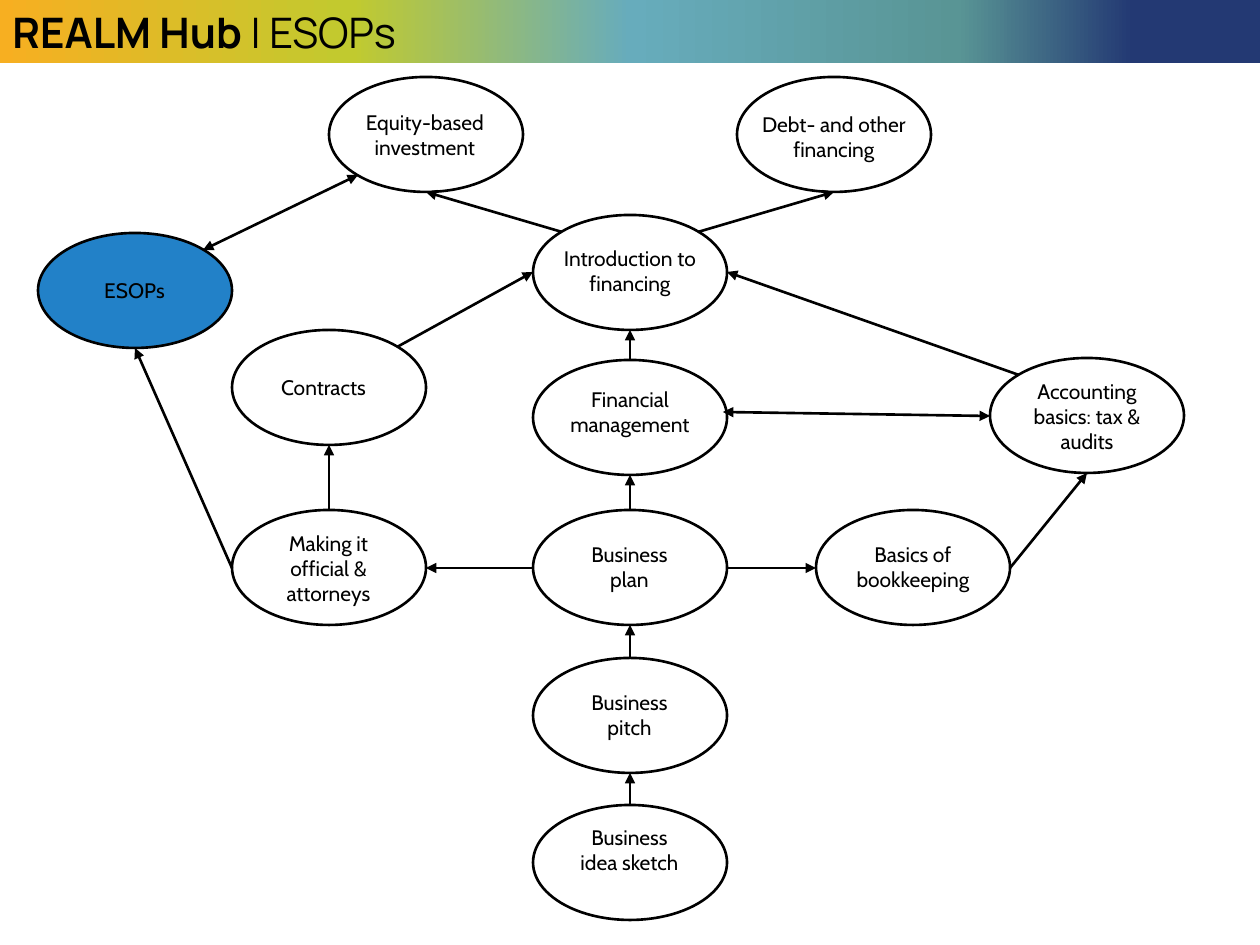
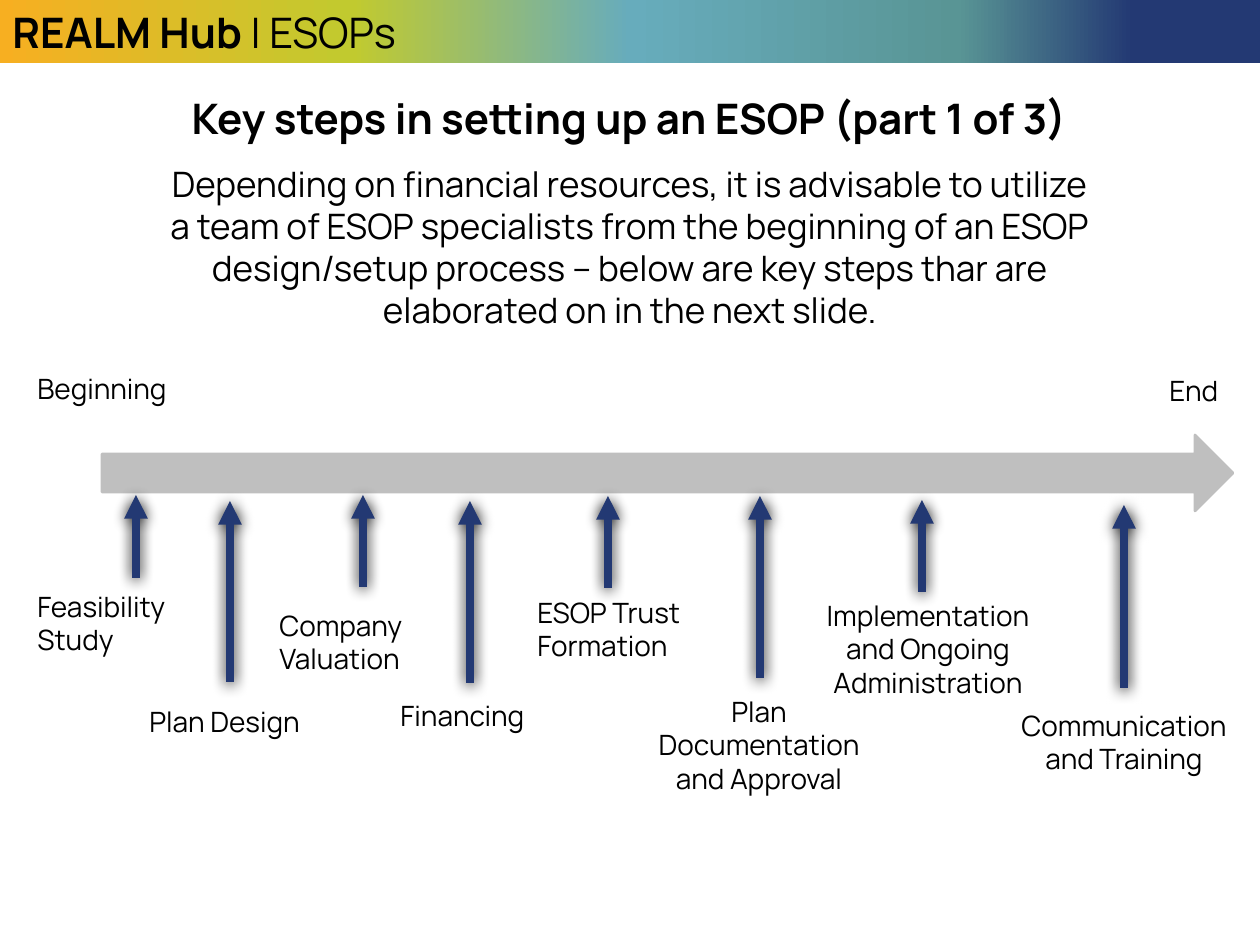
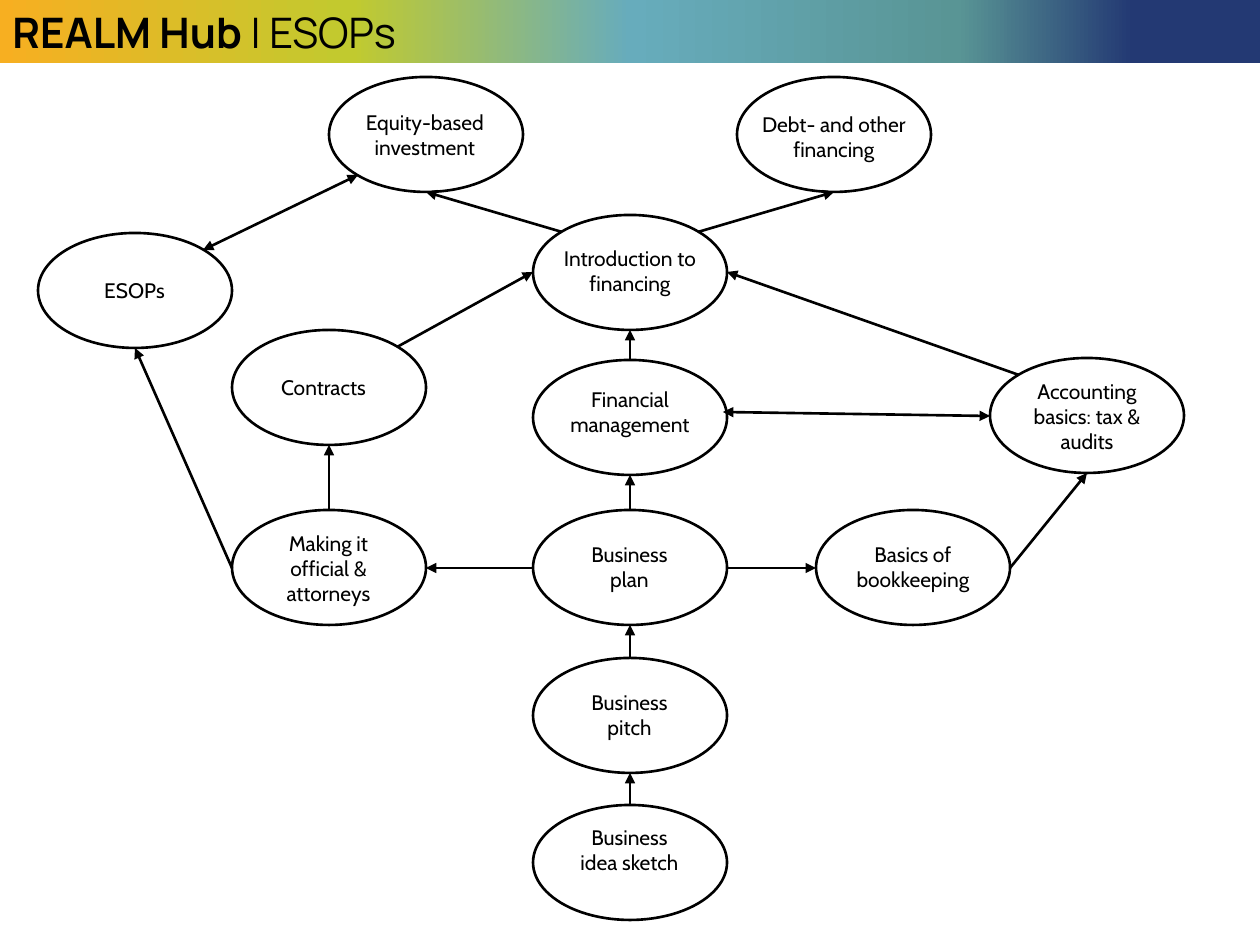
from lxml import etree
from pptx import Presentation
from pptx import util as u
from pptx.dml.color import RGBColor
from pptx.enum import shapes, text
from pptx.oxml.ns import qn

# Scale and colours
PX = u.Inches(1) / 126
BLACK = RGBColor(0x00, 0x00, 0x00)
NAVY = RGBColor(0x23, 0x39, 0x73)
BLUE = RGBColor(0x22, 0x81, 0xC8)
GREY = RGBColor(0xBF, 0xBF, 0xBF)
BAND_STOPS = [
    (0, RGBColor(0xF7, 0xAF, 0x21)),
    (28, RGBColor(0xC1, 0xCA, 0x2F)),
    (50, RGBColor(0x67, 0xAC, 0xBC)),
    (76, RGBColor(0x59, 0x95, 0x95)),
    (90, NAVY),
]

# Text formats
HEADING = {"name": "Manrope", "size": u.Pt(24), "bold": True}
BAND_TOPIC = {**HEADING, "bold": False}
BODY = {"name": "Manrope", "size": u.Pt(20)}
LABEL = {"name": "Manrope", "size": u.Pt(16)}
NODE = {"name": "Cabin", "size": u.Pt(12)}

LEFT, CENTER = text.PP_ALIGN.LEFT, text.PP_ALIGN.CENTER
SHADOW = {"blurRad": u.Pt(8.5), "dist": u.Pt(1), "dir": 5400000,
          "algn": "t", "rotWithShape": 0}

# Course map: label, left, top, text width, text offset x and y, text lines
OVAL_W, OVAL_H = 194, 115
NODES = {
    "idea": ("Business idea sketch", 533, 805, 125, 0, 13, 3),
    "pitch": ("Business pitch", 533, 658, 125, 0, 25, 2),
    "plan": ("Business plan", 533, 510, 125, 0, 25, 2),
    "intro": ("Introduction to financing", 533, 215, 160, 0, 24, 2),
    "books": ("Basics of bookkeeping", 816, 510, 152, 0, 25, 2),
    "official": ("Making it official & attorneys", 232, 510, 125, 0, 14, 3),
    "accounting": ("Accounting basics: tax & audits", 990, 358, 160, 0, 14, 3),
    "contracts": ("Contracts", 232, 330, 159, -5, 38, 1),
    "equity": ("Equity-based\ninvestment", 329, 77, 176, -1, 26, 2),
    "debt": ("Debt- and other financing", 737, 77, 176, 0, 28, 3),
    "management": ("Financial management", 533, 360, 186, 0, 20, 2),
    "esops": ("ESOPs", 38, 233, 159, 0, 38, 1),
}

# Points on an oval as fractions of its width and height
SITES = {
    "top": (0.5, 0), "bottom": (0.5, 1), "left": (0, 0.5), "right": (1, 0.5),
    "top left": (0.15, 0.15), "top right": (0.85, 0.15),
    "bottom left": (0.15, 0.85), "inner right": (0.98, 0.45),
}

# Links: start node and point, end node and point, arrowheads at both ends
LINKS = [
    ("idea", "top", "pitch", "bottom", False),
    ("pitch", "top", "plan", "bottom", False),
    ("plan", "top", "management", "bottom", False),
    ("management", "top", "intro", "bottom", False),
    ("intro", "top right", "debt", "bottom", False),
    ("intro", "top left", "equity", "bottom", False),
    ("plan", "left", "official", "right", False),
    ("plan", "right", "books", "left", False),
    ("books", "right", "accounting", "bottom", False),
    ("official", "top", "contracts", "bottom", False),
    ("contracts", "top right", "intro", "left", False),
    ("accounting", "left", "management", "inner right", True),
    ("accounting", "top left", "intro", "right", False),
    ("equity", "bottom left", "esops", "top right", True),
    ("official", "left", "esops", "bottom", False),
]

# Timeline: label, left, top, width, lines, alignment, arrow x, start and end y
STEPS = [
    ("Feasibility\nStudy", 25, 583, 253, 2, LEFT, 136, 578, 495),
    ("Plan Design", 137, 698, 253, 1, LEFT, 230, 682, 501),
    ("Company Valuation", 267, 602, 188, 2, LEFT, 363, 587, 495),
    ("Financing", 388, 692, 236, 1, LEFT, 470, 683, 501),
    ("ESOP Trust Formation", 525, 589, 236, 2, LEFT, 608, 588, 496),
    ("Plan Documentation and Approval", 630, 688, 258, 3, CENTER, 760, 678, 496),
    ("Implementation and Ongoing Administration", 794, 592, 268, 3, CENTER,
     922, 592, 500),
    ("Communication and Training", 995, 702, 258, 2, CENTER, 1124, 688, 505),
]


class Deck:
    """Holds the style and the slide being drawn."""

    def __init__(self):
        self.prs = Presentation()
        self.prs.slide_width, self.prs.slide_height = self.emu(1260, 945)
        self.s = None

    @staticmethod
    def emu(*lengths):
        return [u.Emu(round(n * PX)) for n in lengths]

    def new_slide(self):
        self.s = self.prs.slides.add_slide(self.prs.slide_layouts[6])
        self.band()

    def run(self, p, words, fmt):
        r = p.add_run()
        r.text = words
        for key, value in fmt.items():
            setattr(r.font, key, value)
        r.font.color.rgb = BLACK

    def shape(self, kind, x, y, w, h, fill=None, line=None):
        sp = self.s.shapes.add_shape(kind, *self.emu(x, y, w, h))
        sp.shadow.inherit = False
        if fill is None:
            sp.fill.background()
        else:
            sp.fill.solid()
            sp.fill.fore_color.rgb = fill
        if line is None:
            sp.line.fill.background()
        else:
            sp.line.color.rgb = line
            sp.line.width = u.Pt(1.5)
        return sp

    def band(self):
        sp = self.shape(shapes.MSO_SHAPE.RECTANGLE, 0, 0, 1260, 63)
        sp.fill.gradient()
        sp.fill.gradient_angle = 0
        stops = sp.element.spPr.find(".//" + qn("a:gsLst"))
        for old in list(stops):
            stops.remove(old)
        for percent, colour in BAND_STOPS:
            gs = etree.SubElement(stops, qn("a:gs"), pos=str(percent * 1000))
            etree.SubElement(gs, qn("a:srgbClr"), val=str(colour))
        p = sp.text_frame.paragraphs[0]
        p.alignment = LEFT
        self.run(p, "REALM Hub ", HEADING)
        self.run(p, "| ESOPs", BAND_TOPIC)

    def text(self, words, x, y, w, lines, fmt, align=LEFT, wrap=True):
        h = 13 + round(fmt["size"].pt * 2.1) * lines
        tf = self.s.shapes.add_textbox(*self.emu(x, y, w, h)).text_frame
        tf.word_wrap = wrap
        tf.auto_size = text.MSO_AUTO_SIZE.SHAPE_TO_FIT_TEXT
        for i, part in enumerate(words.split("\n")):
            p = tf.add_paragraph() if i else tf.paragraphs[0]
            p.alignment = align
            self.run(p, part, fmt)

    def arrow(self, start, end, colour=BLACK, width=1.5, both=False, shadow=False):
        c = self.s.shapes.add_connector(
            shapes.MSO_CONNECTOR.STRAIGHT, *self.emu(*start, *end))
        c.line.color.rgb = colour
        c.line.width = u.Pt(width)
        spPr = c.element.spPr
        ln = spPr.find(qn("a:ln"))
        for tag in ("a:headEnd", "a:tailEnd") if both else ("a:tailEnd",):
            etree.SubElement(ln, qn(tag), type="triangle")
        effects = etree.SubElement(spPr, qn("a:effectLst"))
        if shadow:
            outer = etree.SubElement(effects, qn("a:outerShdw"))
            for key, value in SHADOW.items():
                outer.set(key, str(value))
            etree.SubElement(outer, qn("a:srgbClr"), val=str(BLACK))

    def node(self, label, x, y, text_w, dx, dy, lines, fill=None):
        self.shape(shapes.MSO_SHAPE.OVAL, x, y, OVAL_W, OVAL_H, fill, BLACK)
        text_x = x + (OVAL_W - text_w) // 2 + dx
        self.text(label, text_x, y + dy, text_w, lines, NODE, CENTER)


def site(name, place):
    x, y = NODES[name][1:3]
    fx, fy = SITES[place]
    return round(x + fx * OVAL_W), round(y + fy * OVAL_H)


def course_map(deck, current=None):
    deck.new_slide()
    for name, node in NODES.items():
        deck.node(*node, fill=BLUE if name == current else None)
    for first, leave, second, reach, both in LINKS:
        deck.arrow(site(first, leave), site(second, reach), both=both)


def key_steps(deck):
    deck.new_slide()
    deck.text("Key steps in setting up an ESOP (part 1 of 3)",
              25, 86, 1208, 1, HEADING, CENTER)
    deck.text("Depending on financial resources, it is advisable to utilize a team "
              "of ESOP specialists from the beginning of an ESOP design/setup "
              "process – below are key steps thar are elaborated on in the next "
              "slide.", 152, 156, 956, 4, BODY, CENTER)
    # Timeline bar and its ends
    deck.shape(shapes.MSO_SHAPE.RIGHT_ARROW, 102, 435, 1131, 76, GREY, GREY)
    deck.text("Beginning", 25, 365, 166, 1, LABEL, wrap=False)
    deck.text("End", 1157, 367, 77, 1, LABEL, wrap=False)
    # Steps along the bar
    for label, x, y, w, lines, align, arrow_x, start_y, end_y in STEPS:
        deck.text(label, x, y, w, lines, LABEL, align)
        deck.arrow((arrow_x, start_y), (arrow_x, end_y), NAVY, 4.5, shadow=True)


def main():
    deck = Deck()
    course_map(deck, current="esops")
    key_steps(deck)
    course_map(deck)
    deck.prs.save("out.pptx")


if __name__ == "__main__":
    main()
